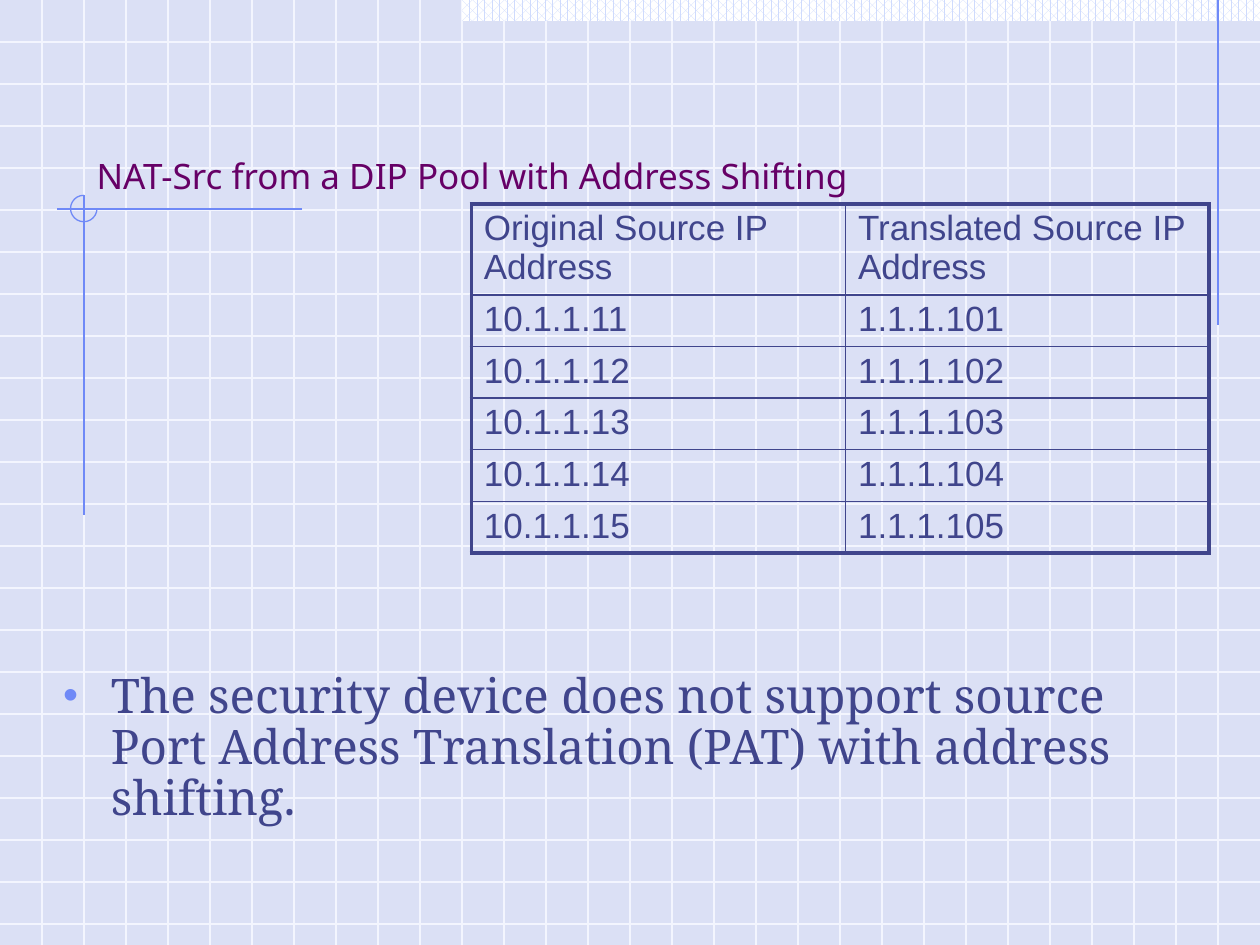
from dataclasses import dataclass
from lxml import etree
from pptx import Presentation
from pptx import util as u
from pptx.dml.color import RGBColor
from pptx.enum import dml, shapes, text
from pptx.oxml import ns


@dataclass
class Theme:
    """Colours, fonts and type sizes."""
    back: str = "DBE0F5"
    grid: str = "F3F5FE"
    band: str = "CFDBFD"
    white: str = "FFFFFF"
    rule: str = "6F89F7"
    head: str = "660066"
    ink: str = "40458C"
    sans: str = "Noto Sans"
    serif: str = "Noto Serif"
    cell: str = "Arial"
    small: float = 20
    large: float = 27.2
    thin: float = 0.75
    inner: float = 1
    outer: float = 2.25


def rgb(code):
    """Turn a hex code into a colour."""
    return RGBColor.from_string(code)


def sub(top, tag, **attrs):
    """Add a DrawingML child element."""
    return etree.SubElement(top, ns.qn("a:" + tag), attrs)


def write(frame, words, size, face, color, bullet=None, space=None):
    """Fill a text frame with one formatted paragraph."""
    frame.word_wrap = True
    para = frame.paragraphs[0]
    para.text = words
    para.alignment = text.PP_ALIGN.LEFT
    para.space_before = u.Pt(0)
    if space:
        para.line_spacing = space
    if bullet:
        props = para._p.get_or_add_pPr()
        props.set("marL", str(u.Inches(0.38)))
        props.set("indent", str(u.Inches(-0.38)))
        sub(sub(props, "buClr"), "srgbClr", val=bullet)
        sub(props, "buSzPct", val="90000")
        sub(props, "buFont", typeface="Arial")
        sub(props, "buChar", char="•")
    font = para.runs[0].font
    font.size, font.name = u.Pt(size), face
    font.color.rgb = rgb(color)


class Deck:
    """Draws on a slide ruled in cells of a third of an inch."""
    COLS, ROWS = 30, 22.5

    def __init__(self, theme):
        """Open a slide with a plain background."""
        self.theme = theme
        self.show = Presentation()
        self.show.slide_width, self.show.slide_height = self.size(self.COLS, self.ROWS)
        self.slide = self.show.slides.add_slide(self.show.slide_layouts[1])
        fill = self.slide.background.fill
        fill.solid()
        fill.fore_color.rgb = rgb(theme.back)

    def size(self, *cells):
        """Turn grid cells into lengths."""
        return [u.Inches(n / 3) for n in cells]

    def line(self, x1, y1, x2, y2, color):
        """Draw a thin straight line."""
        item = self.slide.shapes.add_connector(
            shapes.MSO_CONNECTOR.STRAIGHT, *self.size(x1, y1, x2, y2))
        item.line.color.rgb = rgb(color)
        item.line.width = u.Pt(self.theme.thin)
        sub(item.element.spPr, "effectLst")

    def mesh(self):
        """Rule the whole slide into squares."""
        for row in range(1, int(self.ROWS) + 1):
            self.line(0, row, self.COLS, row, self.theme.grid)
        for col in range(1, self.COLS):
            self.line(col, 0, col, self.ROWS, self.theme.grid)

    def band(self, *box):
        """Draw a patterned bar."""
        item = self.slide.shapes.add_shape(shapes.MSO_SHAPE.RECTANGLE, *self.size(*box))
        item.shadow.inherit = False
        item.line.fill.background()
        item.fill.patterned()
        item.fill.pattern = dml.MSO_PATTERN.PERCENT_60
        item.fill.fore_color.rgb = rgb(self.theme.band)
        item.fill.back_color.rgb = rgb(self.theme.white)

    def ring(self, *box):
        """Draw three quarters of a circle."""
        item = self.slide.shapes.add_shape(shapes.MSO_SHAPE.ARC, *self.size(*box))
        item.adjustments[0], item.adjustments[1] = 0, 162
        item.shadow.inherit = False
        item.fill.background()
        item.line.color.rgb = rgb(self.theme.rule)
        item.line.width = u.Pt(self.theme.thin)

    def holder(self, index, box, anchor):
        """Place a template placeholder in front and give its frame."""
        item = self.slide.placeholders[index]
        item.left, item.top, item.width, item.height = self.size(*box)
        item.element.getparent().append(item.element)
        frame = item.text_frame
        frame.auto_size = text.MSO_AUTO_SIZE.NONE
        frame.vertical_anchor = anchor
        return frame

    def title(self, words, *box):
        """Write the title."""
        frame = self.holder(0, box, text.MSO_ANCHOR.BOTTOM)
        frame.margin_bottom = u.Inches(0.02)
        write(frame, words, self.theme.small, self.theme.sans, self.theme.head)

    def body(self, words, *box):
        """Write the bulleted body below a deep top margin."""
        frame = self.holder(1, box, text.MSO_ANCHOR.TOP)
        frame.margin_top = u.Inches(0.61)
        write(frame, words, self.theme.large, self.theme.serif, self.theme.ink,
              bullet=self.theme.rule, space=0.89)

    def edge(self, cell, side, width):
        """Draw one border of a cell."""
        line = sub(cell._tc.get_or_add_tcPr(), "ln" + side, w=str(u.Pt(width)))
        sub(sub(line, "solidFill"), "srgbClr", val=self.theme.ink)

    def table(self, data, x, y, cols, rows):
        """Draw a clear table with a heavy outer frame."""
        theme = self.theme
        frame = self.slide.shapes.add_table(
            len(rows), len(cols), *self.size(x, y, sum(cols), sum(rows)))
        grid = frame.table
        grid.first_row = grid.horz_banding = False
        for col, width in zip(grid.columns, self.size(*cols)):
            col.width = width
        for row, height in zip(grid.rows, self.size(*rows)):
            row.height = height
        for r, line in enumerate(data):
            for c, words in enumerate(line):
                cell = grid.cell(r, c)
                ends = {"L": c == 0, "R": c == len(cols) - 1,
                        "T": r == 0, "B": r == len(rows) - 1}
                for side, last in ends.items():
                    self.edge(cell, side, theme.outer if last else theme.inner)
                cell.fill.background()
                cell.margin_top = cell.margin_bottom = u.Inches(0.04)
                write(cell.text_frame, words, theme.small, theme.cell, theme.ink)


def main():
    """Build and save the slide."""
    theme = Theme()
    deck = Deck(theme)
    deck.mesh()
    deck.band(11, 0, 19, 0.5)
    for ends in ((29, 0, 29, 7.74), (7.2, 4.98, 1.35, 4.98), (2, 4.65, 2, 12.27)):
        deck.line(*ends, theme.rule)
    deck.ring(1.68, 4.65, 0.63, 0.63)
    deck.title("NAT-Src from a DIP Pool with Address Shifting", 2, 1, 25.5, 3.75)
    deck.body("The security device does not support source Port Address "
              "Translation (PAT) with address shifting.", 1.2, 14.19, 26.97, 6.15)
    data = [("Original Source IP Address", "Translated Source IP Address")]
    data += [(f"10.1.1.{n}", f"1.1.1.{n + 90}") for n in range(11, 16)]
    deck.table(data, 11.22, 4.86, (8.91, 8.66), [2.16] + [1.23] * 5)
    deck.show.save("out.pptx")


if __name__ == "__main__":
    main()
